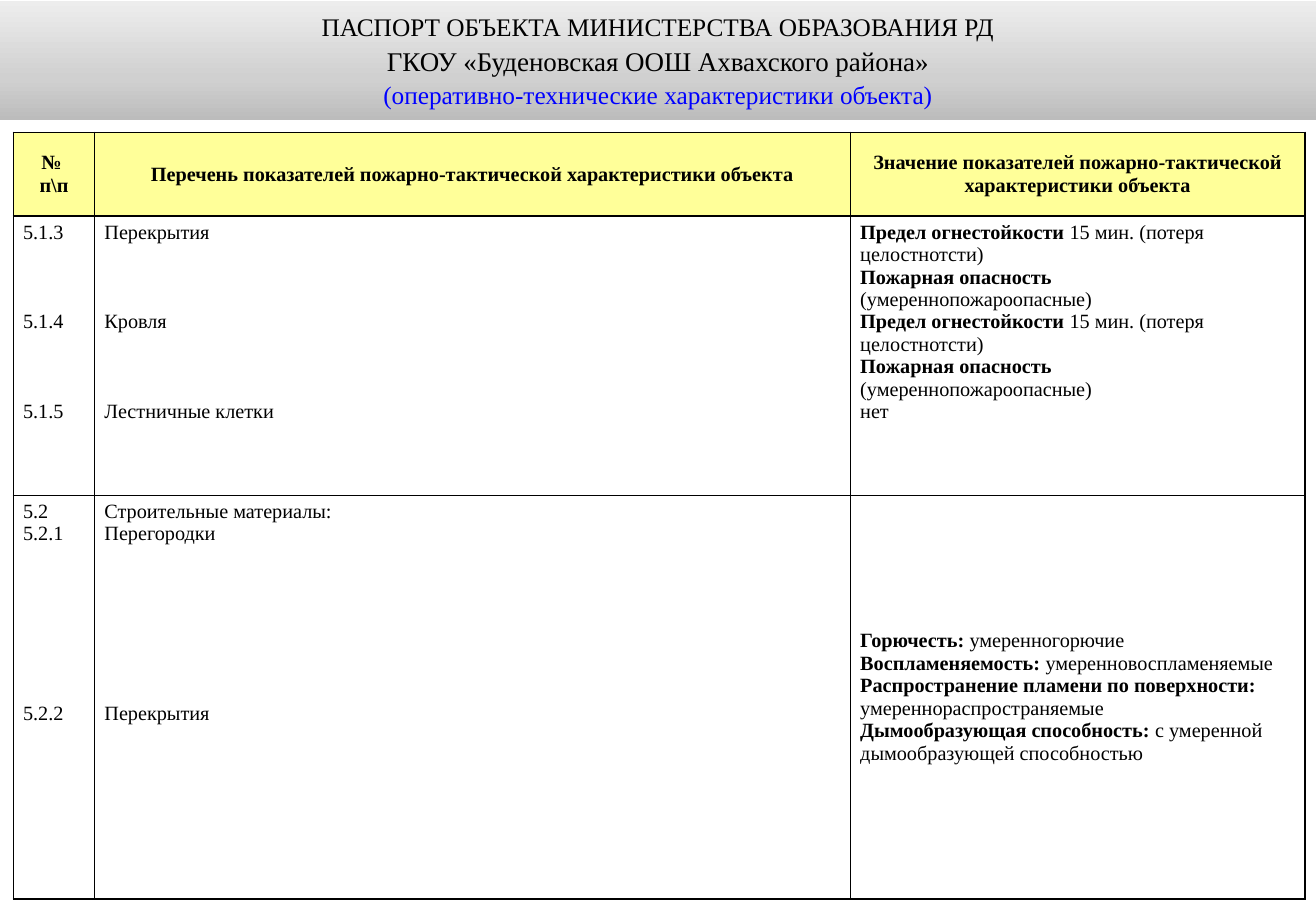
from dataclasses import dataclass

from lxml import etree
from pptx import Presentation, util as u
from pptx.dml.color import RGBColor
from pptx.enum import shapes, text
from pptx.oxml import ns


@dataclass(frozen=True)
class Theme:
    """Colours, type sizes and spacings of the slide."""
    font: str = "Times New Roman"
    ink: str = "000000"
    blue: str = "0000FF"
    head: str = "FFFF99"
    body: str = "FFFFFF"
    fade: tuple = ((0, "BCBCBC"), (35, "D0D0D0"), (100, "EDEDED"))
    size: int = 12
    line: float = 13.3
    lead: float = 1.5
    rule: int = 1


T = Theme()
WIDE, HIGH = 10.83, 7.5
COLS = (0.67, 6.22, 3.74)
ROWS = (0.69, 2.3, 3.32)

TITLE = (
    ("ПАСПОРТ ОБЪЕКТА МИНИСТЕРСТВА ОБРАЗОВАНИЯ РД", 15, T.ink),
    ("ГКОУ «Буденовская ООШ Ахвахского района»", 16, T.ink),
    ("(оперативно-технические характеристики объекта)", 15, T.blue),
)

# Each line holds the empty lines above it, its bold part and its plain part.
LIMIT = (
    (0, "Предел огнестойкости ", "15 мин. (потеря целостнотсти)"),
    (0, "Пожарная опасность", ""),
    (0, "", "(умереннопожароопасные)"),
)
CELLS = (
    (
        ((0, "№ ", ""), (0, "п\\п", "")),
        ((0, "Перечень показателей пожарно-тактической характеристики объекта", ""),),
        ((0, "Значение показателей пожарно-тактической характеристики объекта", ""),),
    ),
    (
        ((0, "", "5.1.3"), (3, "", "5.1.4"), (3, "", "5.1.5")),
        ((0, "", "Перекрытия"), (3, "", "Кровля"), (3, "", "Лестничные клетки")),
        LIMIT * 2 + ((0, "", "нет"),),
    ),
    (
        ((0, "", "5.2"), (0, "", "5.2.1"), (7, "", "5.2.2")),
        ((0, "", "Строительные материалы:"), (0, "", "Перегородки"), (7, "", "Перекрытия")),
        (
            (0, "Горючесть: ", "умеренногорючие"),
            (0, "Воспламеняемость: ", "умеренновоспламеняемые"),
            (0, "Распространение пламени по поверхности:", ""),
            (0, "", "умереннораспространяемые"),
            (0, "Дымообразующая способность: ", "с умеренной дымообразующей способностью"),
        ),
    ),
)


def style(run, size, color, bold=False):
    """Set the font of a run."""
    font = run.font
    font.name, font.size, font.bold = T.font, u.Pt(size), bold
    font.color.rgb = RGBColor.from_string(color)


def paint(parent, color):
    """Add a plain colour to an XML node."""
    etree.SubElement(parent, ns.qn("a:srgbClr"), val=color)


def fade(fill):
    """Fill with the header gradient, dark at the bottom."""
    fill.gradient()
    fill.gradient_angle = 90
    stops = fill._fill._gradFill.find(ns.qn("a:gsLst"))
    for old in list(stops):
        stops.remove(old)
    for share, color in T.fade:
        paint(etree.SubElement(stops, ns.qn("a:gs"), pos=str(share * 1000)), color)


def banner(slide, box):
    """Draw the header band with its three centred lines."""
    band = slide.shapes.add_shape(shapes.MSO_SHAPE.RECTANGLE, *map(u.Inches, box))
    band.shadow.inherit = False
    band.line.fill.background()
    fade(band.fill)
    frame = band.text_frame
    frame.word_wrap = True
    frame.vertical_anchor = text.MSO_ANCHOR.MIDDLE
    frame.text = "\n".join(words for words, _, _ in TITLE)
    for row, (para, (_, size, color)) in enumerate(zip(frame.paragraphs, TITLE)):
        para.alignment = text.PP_ALIGN.CENTER
        para.space_before = u.Pt(T.lead if row else 0)
        style(para.runs[0], size, color)


def border(cell):
    """Rule all four sides of a cell."""
    props = cell._tc.get_or_add_tcPr()
    for spot, side in enumerate("LRTB"):
        edge = etree.Element(ns.qn("a:ln" + side), w=str(u.Pt(T.rule)))
        paint(etree.SubElement(edge, ns.qn("a:solidFill")), T.ink)
        props.insert(spot, edge)


def write(cell, lines, align):
    """Write lines of bold and plain text into a cell."""
    frame = cell.text_frame
    for row, (gap, bold, plain) in enumerate(lines):
        para = frame.add_paragraph() if row else frame.paragraphs[0]
        para.alignment = align
        para.space_before = u.Pt(gap * T.line)
        for words, heavy in ((bold, True), (plain, False)):
            if words:
                run = para.add_run()
                run.text = words
                style(run, T.size, T.ink, heavy)


def grid(slide, box):
    """Draw the table of indicators."""
    frame = slide.shapes.add_table(len(ROWS), len(COLS), *map(u.Inches, box))
    table = frame.table
    table.first_row = table.horz_banding = False
    for col, width in zip(table.columns, COLS):
        col.width = u.Inches(width)
    for row, height in zip(table.rows, ROWS):
        row.height = u.Inches(height)
    for r, line in enumerate(CELLS):
        for c, lines in enumerate(line):
            cell = table.cell(r, c)
            head = r == 0
            mid = head or (r, c) == (2, 2)
            cell.margin_left = cell.margin_right = u.Inches(0.08)
            cell.margin_top = cell.margin_bottom = u.Inches(0.04)
            cell.vertical_anchor = text.MSO_ANCHOR.MIDDLE if mid else text.MSO_ANCHOR.TOP
            cell.fill.solid()
            cell.fill.fore_color.rgb = RGBColor.from_string(T.head if head else T.body)
            border(cell)
            write(cell, lines, text.PP_ALIGN.CENTER if head else text.PP_ALIGN.LEFT)


def main():
    """Build and save the slide."""
    deck = Presentation()
    deck.slide_width, deck.slide_height = u.Inches(WIDE), u.Inches(HIGH)
    slide = deck.slides.add_slide(deck.slide_layouts[6])
    grid(slide, (0.11, 1.09, sum(COLS), sum(ROWS)))
    banner(slide, (0, 0.01, WIDE, 0.98))
    deck.save("out.pptx")


if __name__ == "__main__":
    main()
